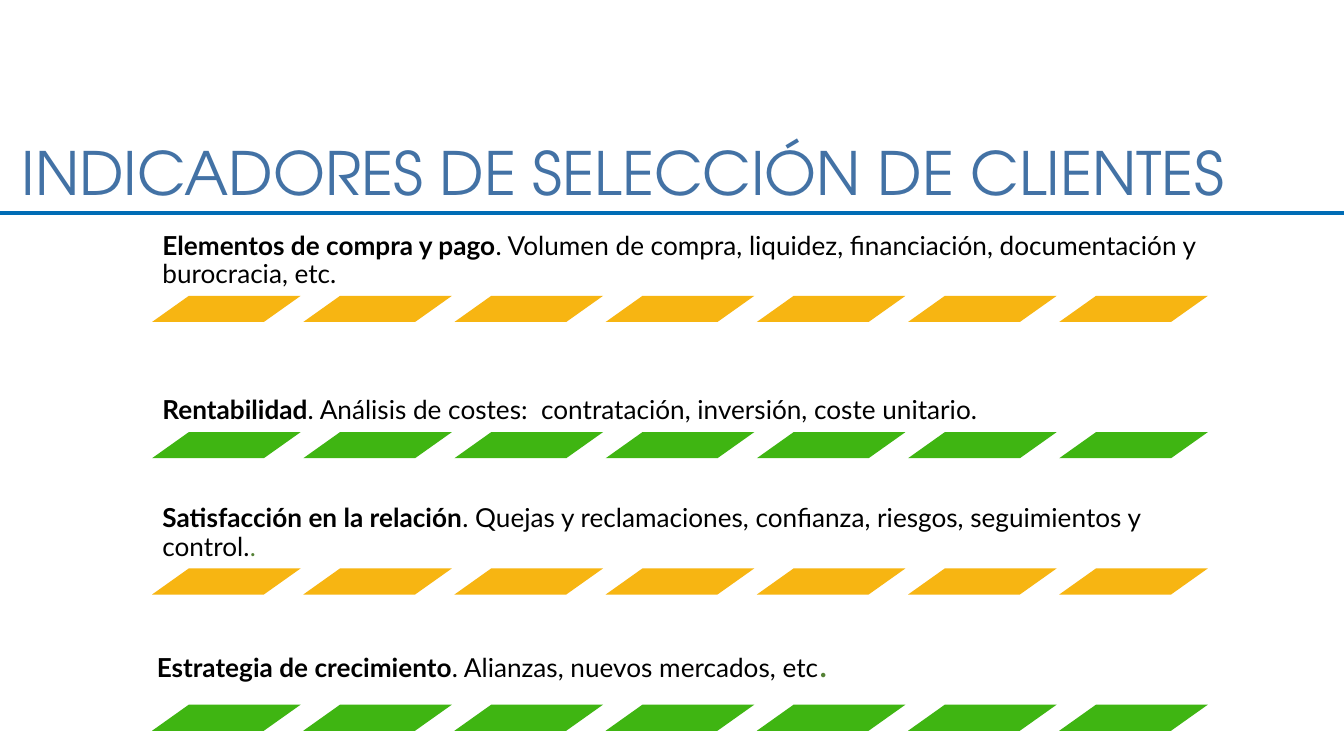
from lxml import etree
from pptx import Presentation, util as u
from pptx.dml.color import RGBColor
from pptx.enum import shapes, text
from pptx.oxml import ns

PX = 6350
AMBER = RGBColor(0xF7, 0xB5, 0x12)
GREEN = RGBColor(0x3F, 0xB5, 0x12)
BLUE = RGBColor(0x00, 0x6C, 0xB5)
TITLE_BLUE = RGBColor(0x43, 0x72, 0xA5)
DARK_GREEN = RGBColor(0x54, 0x81, 0x35)
BLACK = RGBColor(0, 0, 0)

BANDS = 7
INDICATORS = [
    ("Elementos de compra y pago",
     ". Volumen de compra, liquidez, financiación, documentación y burocracia, etc.",
     None, AMBER, 0, 0),
    ("Rentabilidad",
     ". Análisis de costes:  contratación, inversión, coste unitario.",
     None, GREEN, 0, 0),
    ("Satisfacción en la relación",
     ". Quejas y reclamaciones, confianza, riesgos, seguimientos y control.",
     14, AMBER, 0, 0),
    ("Estrategia de crecimiento",
     ". Alianzas, nuevos mercados, etc",
     20, GREEN, -6, -13),
]


def px(*lengths):
    """Turn px lengths into EMU."""
    return [u.Emu(n * PX) for n in lengths]


def add_title(s, x, y, w, h):
    """Place the slide title in its box."""
    tf = s.shapes.add_textbox(*px(x, y, w, h)).text_frame
    tf.word_wrap = True
    tf.auto_size = text.MSO_AUTO_SIZE.SHAPE_TO_FIT_TEXT
    p = tf.paragraphs[0]
    p.text = "INDICADORES DE SELECCIÓN DE CLIENTES"
    p.line_spacing = 1.1
    p.font.size, p.font.name = u.Pt(32), "TeX Gyre Adventor"
    p.font.color.rgb = TITLE_BLUE


def add_rule(s, x, y, w):
    """Draw the horizontal rule below the title."""
    line = s.shapes.add_connector(
        shapes.MSO_CONNECTOR.STRAIGHT, *px(x, y, x + w, y))
    line.line.color.rgb, line.line.width = BLUE, u.Pt(2)
    etree.SubElement(line._element.spPr, ns.qn("a:effectLst"))


def add_caption(s, x, y, w, h, heading, detail, dot_size):
    """Place an indicator's bold heading, detail and optional green dot."""
    tf = s.shapes.add_textbox(*px(x, y, w, h)).text_frame
    tf.word_wrap = True
    tf.vertical_anchor = text.MSO_ANCHOR.BOTTOM
    tf.margin_left, tf.margin_top, tf.margin_right, tf.margin_bottom = px(8, 8, 8, 8)
    p = tf.paragraphs[0]
    p.line_spacing = 0.9
    runs = [(heading, "Lato", 14, BLACK), (detail, "Lato", 14, BLACK)]
    if dot_size:
        runs.append((".", "Calibri", dot_size, DARK_GREEN))
    for i, (words, face, size, color) in enumerate(runs):
        r = p.add_run()
        r.text = words
        r.font.name, r.font.size, r.font.bold = face, u.Pt(size), i == 0
        r.font.color.rgb = color


def add_bands(s, x, y, w, h, color):
    """Spread equal slanted bands across the given box."""
    band_w = 153
    pitch = (w - band_w) // (BANDS - 1)
    for i in range(BANDS):
        sp = s.shapes.add_shape(
            shapes.MSO_SHAPE.PARALLELOGRAM, *px(x + i * pitch, y, band_w, h))
        sp.adjustments[0] = 1.408
        sp.shadow.inherit = False
        sp.fill.solid()
        sp.fill.fore_color.rgb = sp.line.color.rgb = color
        sp.line.width = u.Pt(1)
        ln = sp._element.spPr.find(ns.qn("a:ln"))
        etree.SubElement(ln, ns.qn("a:miter"), lim="800000")


def add_indicator(s, x, y, w, h, indicator):
    """Place one indicator: caption above a strip of bands."""
    heading, detail, dot_size, color, dx, dy = indicator
    band_h = 26
    caption_h = h - band_h
    add_caption(s, x + dx, y + dy, w, caption_h, heading, detail, dot_size)
    add_bands(s, x, y + caption_h, 1125, band_h, color)


def main():
    """Build the slide and save it."""
    prs = Presentation()
    prs.slide_width, prs.slide_height = px(1440, 810)
    s = prs.slides.add_slide(prs.slide_layouts[6])
    for i, indicator in enumerate(INDICATORS):
        add_indicator(s, 166, 214 + i * 146, 1148, 130, indicator)
    add_rule(s, 0, 228, 1440)
    add_title(s, 9, 131, 1431, 89)
    prs.save("out.pptx")


if __name__ == "__main__":
    main()
